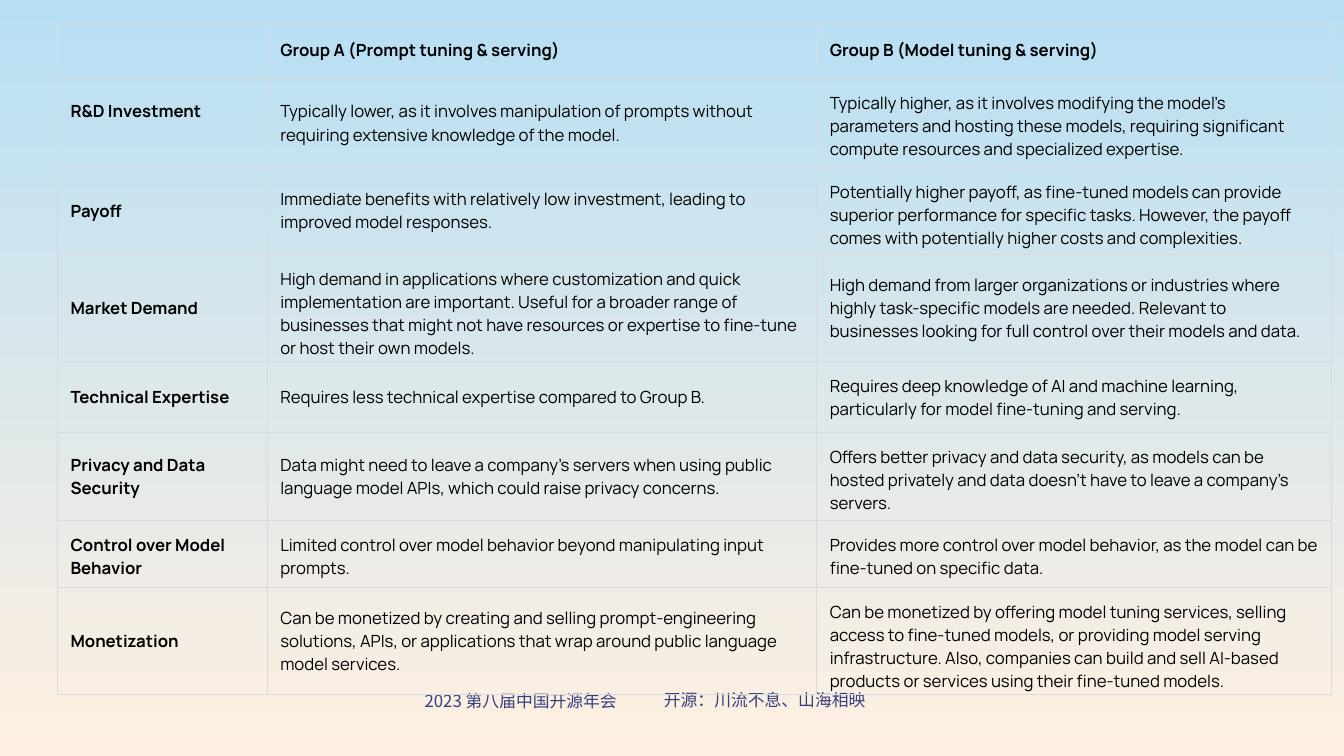
"""Build a slide with a table comparing prompt tuning and model tuning."""
from lxml import etree
from pptx import Presentation
from pptx.dml.color import RGBColor
from pptx.enum import text
from pptx.oxml import ns
from pptx.util import Inches, Pt

BACKGROUND = ["B7DFF4", "FFF0E1"]
FOOTERS = [
    ("2023 第八届中国开源年会", 3.79, 6.8, 2.75),
    ("开源：川流不息、山海相映", 6.38, 6.79, 2.41),
]
COLUMN_WIDTHS = [2.08, 5.45, 5.11]
ROW_HEIGHTS = [0.56, 0.88, 0.86, 1.07, 0.7, 0.87, 0.67, 1.06]
ROWS = [
    ("", "Group A (Prompt tuning & serving)", "Group B (Model tuning & serving)"),
    ("R&D Investment",
     "Typically lower, as it involves manipulation of prompts without requiring "
     "extensive knowledge of the model.",
     "Typically higher, as it involves modifying the model's parameters and hosting "
     "these models, requiring significant compute resources and specialized expertise."),
    ("Payoff",
     "Immediate benefits with relatively low investment, leading to improved model "
     "responses.",
     "Potentially higher payoff, as fine-tuned models can provide superior performance "
     "for specific tasks. However, the payoff comes with potentially higher costs and "
     "complexities."),
    ("Market Demand",
     "High demand in applications where customization and quick implementation are "
     "important. Useful for a broader range of businesses that might not have resources "
     "or expertise to fine-tune or host their own models.",
     "High demand from larger organizations or industries where highly task-specific "
     "models are needed. Relevant to businesses looking for full control over their "
     "models and data."),
    ("Technical Expertise",
     "Requires less technical expertise compared to Group B.",
     "Requires deep knowledge of AI and machine learning, particularly for model "
     "fine-tuning and serving."),
    ("Privacy and Data Security",
     "Data might need to leave a company's servers when using public language model "
     "APIs, which could raise privacy concerns.",
     "Offers better privacy and data security, as models can be hosted privately and "
     "data doesn't have to leave a company's servers."),
    ("Control over Model Behavior",
     "Limited control over model behavior beyond manipulating input prompts.",
     "Provides more control over model behavior, as the model can be fine-tuned on "
     "specific data."),
    ("Monetization",
     "Can be monetized by creating and selling prompt-engineering solutions, APIs, or "
     "applications that wrap around public language model services.",
     "Can be monetized by offering model tuning services, selling access to fine-tuned "
     "models, or providing model serving infrastructure. Also, companies can build and "
     "sell AI-based products or services using their fine-tuned models."),
]
MARGIN = 0.13
LINE_HEIGHT = 0.23


def color(value):
    return RGBColor.from_string(value)


def format_runs(paragraph, name, value, bold=False):
    for run in paragraph.runs:
        run.font.name = name
        run.font.size = Pt(12)
        run.font.bold = bold
        run.font.color.rgb = color(value)
        east_asian = etree.SubElement(run.font._element, ns.qn("a:ea"))
        east_asian.set("typeface", name)


def add_borders(cell, value, width):
    properties = cell._tc.get_or_add_tcPr()
    for position, side in enumerate(("lnL", "lnR", "lnT", "lnB")):
        line = etree.Element(ns.qn(f"a:{side}"), w=str(Pt(width)))
        fill = etree.SubElement(line, ns.qn("a:solidFill"))
        etree.SubElement(fill, ns.qn("a:srgbClr"), val=value)
        properties.insert(position, line)


def add_background(slide):
    fill = slide.background.fill
    fill.gradient()
    fill.gradient_angle = 270
    for stop, value in zip(fill.gradient_stops, BACKGROUND):
        stop.color.rgb = color(value)


def add_footer(slide, words, left, top, width):
    box = slide.shapes.add_textbox(Inches(left), Inches(top), Inches(width), Inches(0.3))
    box.text_frame.word_wrap = True
    box.text_frame.text = words
    paragraph = box.text_frame.paragraphs[0]
    paragraph.alignment = text.PP_ALIGN.CENTER
    format_runs(paragraph, "Noto Sans CJK SC", "363E7D")


def fill_cell(cell, words, bold):
    cell.fill.background()
    add_borders(cell, "D9D9E3", 0.75)
    cell.vertical_anchor = text.MSO_ANCHOR.MIDDLE
    cell.margin_left = cell.margin_right = Inches(MARGIN)
    cell.margin_top = cell.margin_bottom = Inches(MARGIN)
    cell.text_frame.text = words
    format_runs(cell.text_frame.paragraphs[0], "Manrope", "000000", bold)


def add_comparison(slide):
    frame = slide.shapes.add_table(
        len(ROWS), len(COLUMN_WIDTHS), Inches(0.57), Inches(0.22),
        Inches(sum(COLUMN_WIDTHS)), Inches(sum(ROW_HEIGHTS)))
    table = frame.table
    table.first_row = table.horz_banding = False
    for column, width in zip(table.columns, COLUMN_WIDTHS):
        column.width = Inches(width)
    for row, height in zip(table.rows, ROW_HEIGHTS):
        row.height = Inches(height)
    for row_index, row in enumerate(ROWS):
        for column_index, words in enumerate(row):
            bold = row_index == 0 or column_index == 0
            fill_cell(table.cell(row_index, column_index), words, bold)
    table.cell(1, 0).margin_bottom = Inches(MARGIN + LINE_HEIGHT)


def main():
    presentation = Presentation()
    presentation.slide_width = Inches(13.33)
    presentation.slide_height = Inches(7.5)
    slide = presentation.slides.add_slide(presentation.slide_layouts[6])
    add_background(slide)
    for footer in FOOTERS:
        add_footer(slide, *footer)
    add_comparison(slide)
    presentation.save("out.pptx")


if __name__ == "__main__":
    main()
